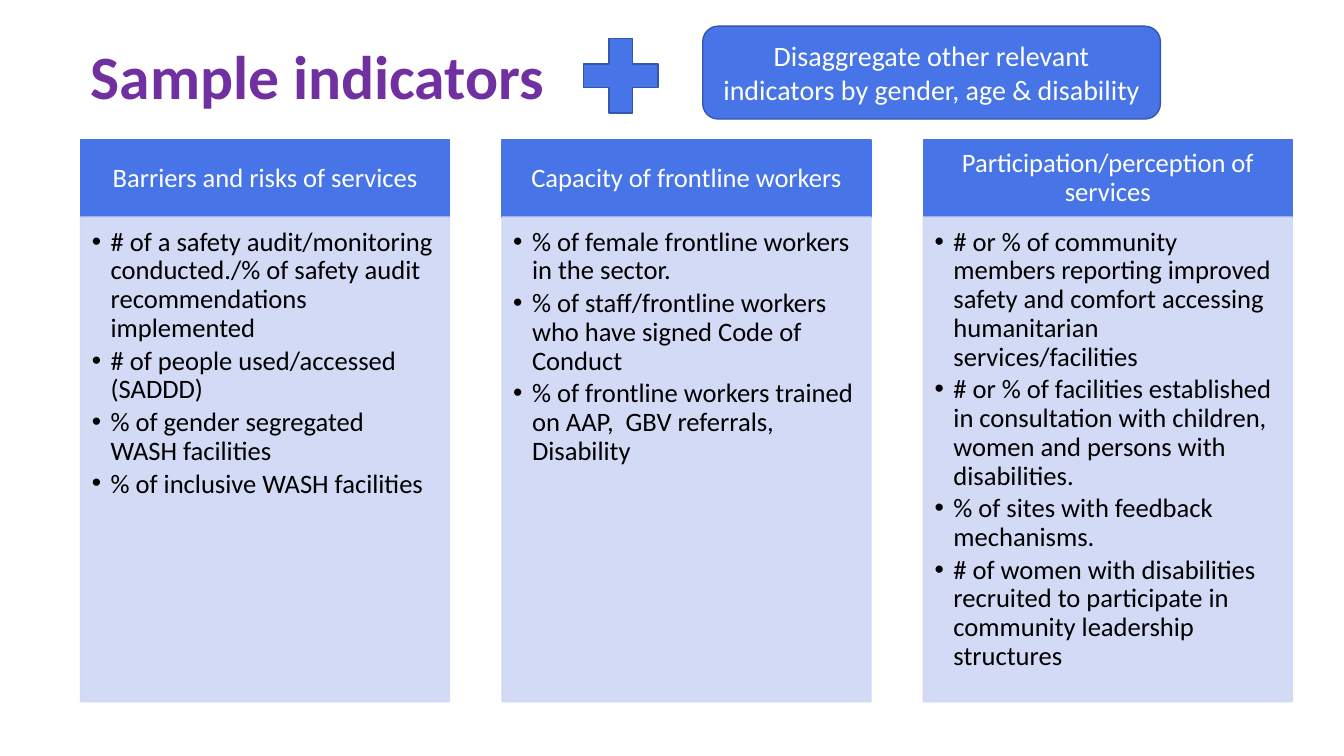
from dataclasses import dataclass

from lxml.etree import SubElement
from pptx import Presentation
from pptx.dml.color import RGBColor
from pptx.enum.shapes import MSO_SHAPE
from pptx.enum.text import MSO_ANCHOR, MSO_AUTO_SIZE, PP_ALIGN
from pptx.oxml.ns import qn
from pptx.util import Pt


@dataclass(frozen=True)
class Theme:
    font: str = "Calibri"
    title: RGBColor = RGBColor(0x70, 0x30, 0xA0)
    accent: RGBColor = RGBColor(0x47, 0x75, 0xE7)
    outline: RGBColor = RGBColor(0x35, 0x57, 0xAB)
    panel: RGBColor = RGBColor(0xCF, 0xD6, 0xF6)
    light: RGBColor = RGBColor(0xFF, 0xFF, 0xFF)
    dark: RGBColor = RGBColor(0, 0, 0)
    title_size: int = 44
    callout_size: int = 20
    column_size: int = 19


THEME = Theme()

COLUMNS = [
    ("Barriers and risks of services", [
        "# of a safety audit/monitoring conducted./% of safety audit recommendations implemented",
        "# of people used/accessed (SADDD)",
        "% of gender segregated WASH facilities",
        "% of inclusive WASH facilities",
    ]),
    ("Capacity of frontline workers", [
        "% of female frontline workers in the sector.",
        "% of staff/frontline workers who have signed Code of Conduct",
        "% of frontline workers trained on AAP,  GBV referrals, Disability",
    ]),
    ("Participation/perception of services", [
        "# or % of community members reporting improved safety and comfort accessing "
        "humanitarian services/facilities",
        "# or % of facilities established in consultation with children, women and "
        "persons with disabilities.",
        "% of sites with feedback mechanisms.",
        "# of women with disabilities recruited to participate in community leadership structures",
    ]),
]


def add_filled(slide, preset, box, fill, line):
    shape = slide.shapes.add_shape(preset, *map(Pt, box))
    shape.shadow.inherit = False
    shape.fill.solid()
    shape.fill.fore_color.rgb = fill
    shape.line.color.rgb = line
    shape.line.width = Pt(1)
    return shape


def set_insets(frame, left, top, right, bottom):
    frame.margin_left, frame.margin_top = Pt(left), Pt(top)
    frame.margin_right, frame.margin_bottom = Pt(right), Pt(bottom)


def style_text(frame, size, color, align, spacing=None, bold=False):
    frame.word_wrap = True
    for paragraph in frame.paragraphs:
        paragraph.alignment = align
        paragraph.line_spacing = spacing
        for run in paragraph.runs:
            run.font.name = THEME.font
            run.font.size = Pt(size)
            run.font.bold = bold
            run.font.color.rgb = color


def add_bullet(paragraph):
    paragraph.level = 1
    paragraph.space_after = Pt(2.85)
    properties = paragraph._p.get_or_add_pPr()
    properties.set("marL", str(Pt(13.5)))
    properties.set("indent", str(-Pt(13.5)))
    SubElement(properties, qn("a:buFont")).set("typeface", "Arial")
    SubElement(properties, qn("a:buChar")).set("char", "•")


def place_title(slide, box):
    title = slide.shapes.title
    title.left, title.top, title.width, title.height = map(Pt, box)
    frame = title.text_frame
    frame.text = "Sample indicators"
    frame.auto_size = MSO_AUTO_SIZE.NONE
    frame.vertical_anchor = MSO_ANCHOR.MIDDLE
    style_text(frame, THEME.title_size, THEME.title, PP_ALIGN.LEFT, 0.9, bold=True)


def add_callout(slide, box):
    left, top, width, height = box
    plus_size, plus_offset = 72, 94.5

    # Rounded message
    message = add_filled(slide, MSO_SHAPE.ROUNDED_RECTANGLE,
                         (left + plus_offset, top, width - plus_offset, height),
                         THEME.accent, THEME.outline)
    message.text_frame.text = "Disaggregate other relevant indicators by gender, age & disability"
    message.text_frame.vertical_anchor = MSO_ANCHOR.MIDDLE
    style_text(message.text_frame, THEME.callout_size, THEME.light, PP_ALIGN.CENTER)

    # Plus sign
    add_filled(slide, MSO_SHAPE.MATH_PLUS, (left, top - 0.5, plus_size, plus_size),
               THEME.accent, THEME.outline)


def add_column(slide, box, heading, indicators):
    left, top, width, height = box
    header_height = 55

    # Heading
    header = add_filled(slide, MSO_SHAPE.RECTANGLE, (left, top, width, header_height),
                        THEME.accent, THEME.accent)
    header.text_frame.text = heading
    header.text_frame.vertical_anchor = MSO_ANCHOR.MIDDLE
    set_insets(header.text_frame, 10.8, 6, 10.8, 6)
    style_text(header.text_frame, THEME.column_size, THEME.light, PP_ALIGN.CENTER, 0.9)

    # Indicator list on a slightly transparent panel
    panel = add_filled(slide, MSO_SHAPE.RECTANGLE,
                       (left, top + header_height, width, height - header_height),
                       THEME.panel, THEME.panel)
    for color in panel._element.spPr.iter(qn("a:srgbClr")):
        SubElement(color, qn("a:alpha")).set("val", "90000")
    frame = panel.text_frame
    frame.text = "\n".join(indicators)
    frame.vertical_anchor = MSO_ANCHOR.TOP
    set_insets(frame, 8, 8, 10.8, 12)
    style_text(frame, THEME.column_size, THEME.dark, PP_ALIGN.LEFT, 0.9)
    for paragraph in frame.paragraphs:
        add_bullet(paragraph)


def add_columns(slide, box):
    left, top, width, height = box
    gap = 37.5
    column_width = (width - gap * (len(COLUMNS) - 1)) / len(COLUMNS)
    for index, (heading, indicators) in enumerate(COLUMNS):
        column_left = left + index * (column_width + gap)
        add_column(slide, (column_left, top, column_width, height), heading, indicators)


def main():
    deck = Presentation()
    deck.slide_width, deck.slide_height = Pt(960), Pt(540)
    slide = deck.slides.add_slide(deck.slide_layouts[5])
    place_title(slide, (57.6, 28.8, 828, 56.2))
    add_columns(slide, (57.6, 100, 865.5, 401.3))
    add_callout(slide, (407.5, 18.7, 421.4, 66.3))
    deck.save("out.pptx")


if __name__ == "__main__":
    main()
